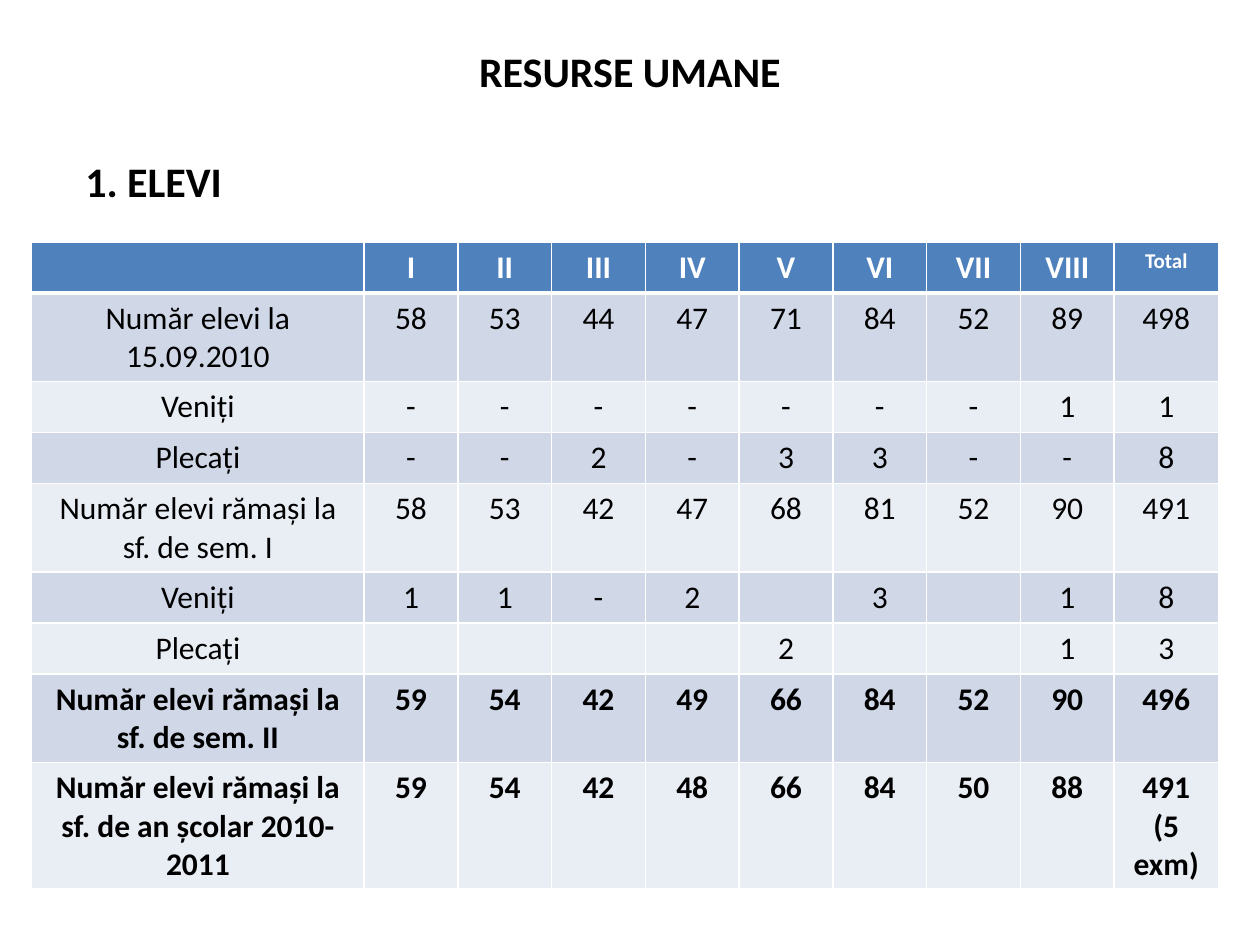
"""Build the slide with pupil numbers by class and term."""
from dataclasses import dataclass

from lxml import etree
from pptx import Presentation
from pptx.dml.color import RGBColor
from pptx.enum.text import MSO_ANCHOR, PP_ALIGN
from pptx.util import Cm, Pt

LEFT, CENTER = PP_ALIGN.LEFT, PP_ALIGN.CENTER
MIDDLE = MSO_ANCHOR.MIDDLE
NS = "http://schemas.openxmlformats.org/drawingml/2006/main"


@dataclass(frozen=True)
class Theme:
    font: str = "Calibri"
    ink: str = "000000"
    paper: str = "FFFFFF"
    head: str = "4F81BD"
    bands: tuple = ("D0D8E8", "E9EDF4")
    title: int = 24
    body: int = 18
    small: int = 12
    thin: int = 1
    thick: int = 3


theme = Theme()


def write(frame, text, size, color, bold, align):
    frame.text = text
    for para in frame.paragraphs:
        para.alignment = align
        para.font.name = theme.font
        para.font.size = Pt(size)
        para.font.bold = bold
        para.font.color.rgb = RGBColor.from_string(color)


def edge(cell, side, width):
    props = cell._tc.get_or_add_tcPr()
    line = etree.SubElement(props, f"{{{NS}}}ln{side}", w=str(Pt(width)))
    fill = etree.SubElement(line, f"{{{NS}}}solidFill")
    etree.SubElement(fill, f"{{{NS}}}srgbClr", val=theme.paper)


deck = Presentation()
deck.slide_width, deck.slide_height = Cm(25.4), Cm(19.05)
slide = deck.slides.add_slide(deck.slide_layouts[6])

for text, left, top, align in (
    ("RESURSE UMANE", 1.27, 0.76, CENTER),
    ("1. ELEVI", 1.47, 2.97, LEFT),
):
    box = slide.shapes.add_textbox(Cm(left), Cm(top), Cm(22.86), Cm(1.35))
    box.text_frame.word_wrap = True
    box.text_frame.vertical_anchor = MIDDLE
    write(box.text_frame, text, theme.title, theme.ink, True, align)

rows = (
    ("", "I", "II", "III", "IV", "V", "VI", "VII", "VIII", "Total"),
    ("Număr elevi la 15.09.2010", 58, 53, 44, 47, 71, 84, 52, 89, 498),
    ("Veniți", "-", "-", "-", "-", "-", "-", "-", 1, 1),
    ("Plecați", "-", "-", 2, "-", 3, 3, "-", "-", 8),
    ("Număr elevi rămași la sf. de sem. I", 58, 53, 42, 47, 68, 81, 52, 90, 491),
    ("Veniți", 1, 1, "-", 2, "", 3, "", 1, 8),
    ("Plecați", "", "", "", "", 2, "", "", 1, 3),
    ("Număr elevi rămași la sf. de sem. II", 59, 54, 42, 49, 66, 84, 52, 90, 496),
    ("Număr elevi rămași la sf. de an școlar 2010-2011",
     59, 54, 42, 48, 66, 84, 50, 88, "491\n(5\nexm)"),
)
widths = [6.7] + [1.89] * 8 + [2.1]
tall = 1.03
bold_rows = (0, 7, 8)

table = slide.shapes.add_table(
    len(rows), len(widths), Cm(0.64), Cm(4.88),
    Cm(sum(widths)), Cm(tall * len(rows))).table
for col, width in zip(table.columns, widths):
    col.width = Cm(width)

for r, row in enumerate(rows):
    table.rows[r].height = Cm(tall)
    back = theme.bands[(r - 1) % 2] if r else theme.head
    color = theme.ink if r else theme.paper
    for c, value in enumerate(row):
        cell = table.cell(r, c)
        size = theme.small if value == "Total" else theme.body
        write(cell.text_frame, str(value), size, color, r in bold_rows, CENTER)
        for side in "LRTB":
            heavy = (r, side) in ((0, "B"), (1, "T"))
            edge(cell, side, theme.thick if heavy else theme.thin)
        cell.fill.solid()
        cell.fill.fore_color.rgb = RGBColor.from_string(back)

deck.save("out.pptx")
